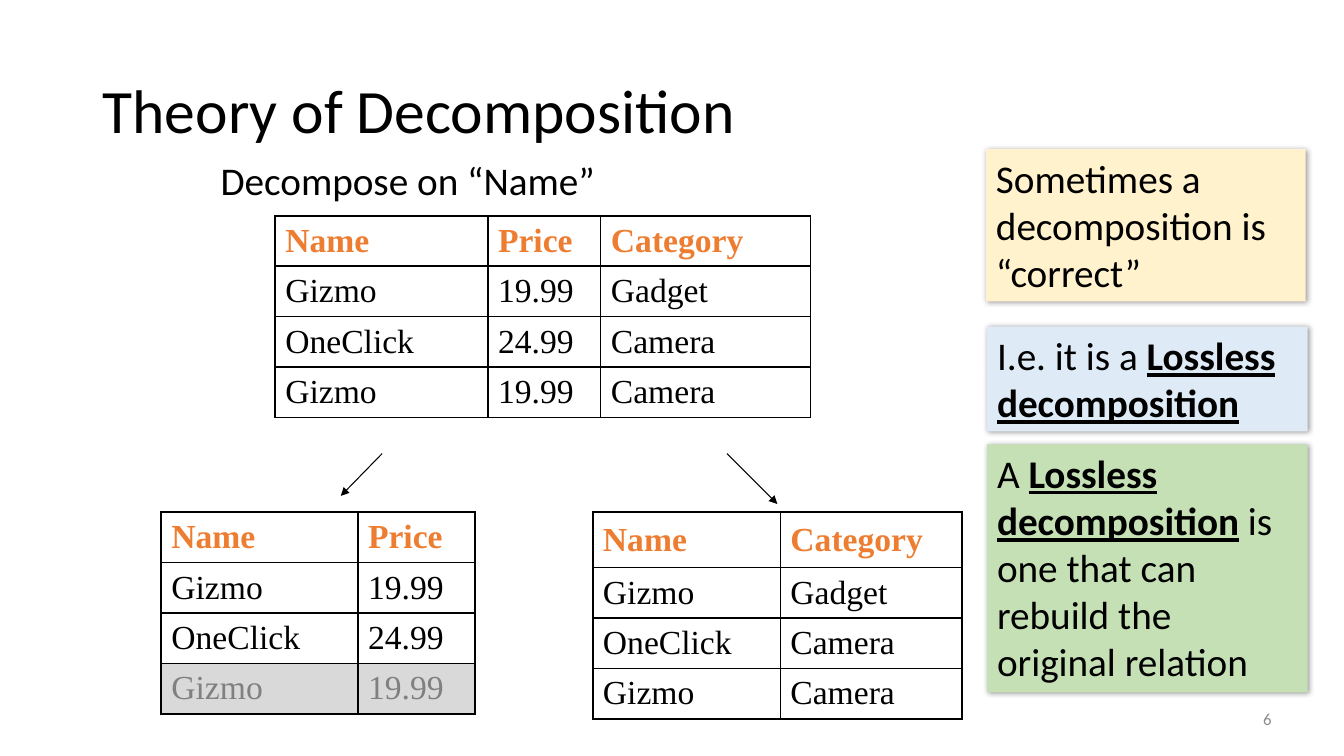
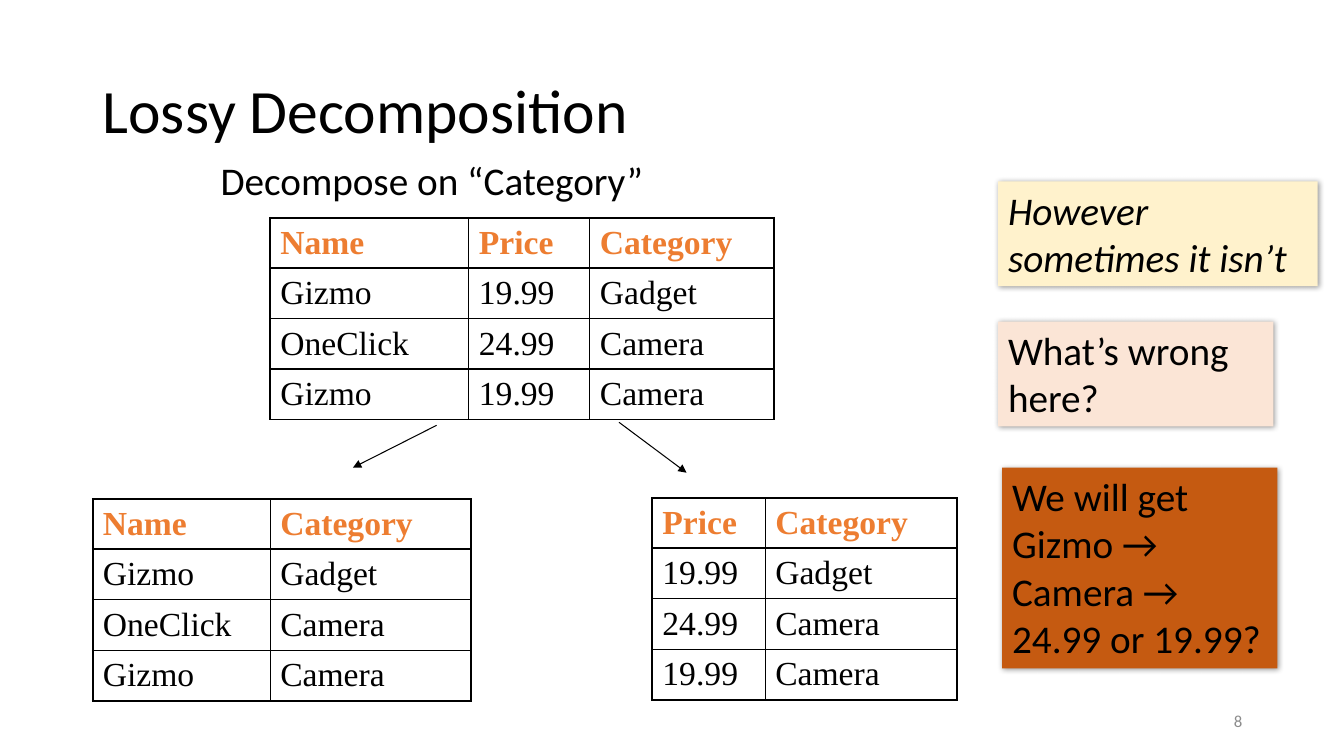
from dataclasses import dataclass

from lxml.etree import SubElement
from pptx import Presentation
from pptx.dml.color import RGBColor
from pptx.enum.shapes import MSO_CONNECTOR, MSO_SHAPE
from pptx.enum.text import MSO_ANCHOR as Anchor, MSO_AUTO_SIZE as AutoSize, PP_ALIGN as Align
from pptx.oxml.ns import qn
from pptx.slide import Slide
from pptx.util import Emu, Inches, Pt


@dataclass(frozen=True)
class Theme:
    font: str = "Calibri"
    table_font: str = "Times New Roman"
    title_size: float = 44
    body_size: float = 28
    table_size: float = 24
    number_size: float = 12
    ink: str = "000000"
    header: str = "ED7D31"
    number: str = "8C8C8C"
    muted_text: str = "808080"
    muted_fill: str = "D9D9D9"
    cream: str = "FFF2CC"
    blue: str = "DEEBF7"
    green: str = "C5E0B4"
    peach: str = "FBE5D6"
    rust: str = "C55A11"
    outer_border: float = 1.5
    inner_border: float = 1
    arrow_width: float = 0.75


THEME = Theme()
ROW_HEIGHT = 0.47


@dataclass(frozen=True)
class Box:
    left: float
    top: float
    width: float
    height: float

    def lengths(self) -> tuple[Emu, ...]:
        return tuple(Inches(value) for value in (self.left, self.top, self.width, self.height))


@dataclass(frozen=True)
class Relation:
    left: float
    top: float
    widths: tuple[float, ...]
    columns: tuple[str, ...]
    header_height: float = ROW_HEIGHT
    muted_row: int | None = None


@dataclass(frozen=True)
class Arrow:
    start: tuple[float, float]
    end: tuple[float, float]


@dataclass(frozen=True)
class Phrase:
    text: str
    strong: bool = False
    italic: bool = False


@dataclass(frozen=True)
class Note:
    box: Box
    fill: str
    phrases: tuple[Phrase, ...]


@dataclass(frozen=True)
class Page:
    title: str
    subtitle: str
    subtitle_width: float
    number: str
    number_box: Box
    relations: tuple[Relation, ...]
    arrows: tuple[Arrow, ...]
    notes: tuple[Note, ...]


PRODUCTS = {
    "Name": ("Gizmo", "OneClick", "Gizmo"),
    "Price": ("19.99", "24.99", "19.99"),
    "Category": ("Gadget", "Camera", "Camera"),
}
LOSSLESS = Phrase("Lossless decomposition", strong=True)

PAGES = (
    Page(
        "Theory of Decomposition", "Decompose on “Name”", 3.96,
        "6", Box(10.38, 6.93, 2.33, 0.4),
        (
            Relation(2.73, 2.14, (2.11, 1.12, 2.08), ("Name", "Price", "Category")),
            Relation(1.6, 5.08, (1.95, 1.16), ("Name", "Price"), muted_row=3),
            Relation(5.88, 5.08, (1.86, 1.8), ("Name", "Category"), header_height=0.55),
        ),
        (Arrow((3.79, 4.5), (3.38, 4.92)), Arrow((7.21, 4.5), (7.71, 5))),
        (
            Note(Box(9.78, 1.48, 3.17, 1.51), THEME.cream,
                 (Phrase("Sometimes a decomposition is “correct”"),)),
            Note(Box(9.79, 3.24, 3.18, 1.04), THEME.blue,
                 (Phrase("I.e. it is a "), LOSSLESS)),
            Note(Box(9.79, 4.41, 3.18, 2.46), THEME.green,
                 (Phrase("A "), LOSSLESS,
                  Phrase(" is one that can rebuild the original relation"))),
        ),
    ),
    Page(
        "Lossy Decomposition", "Decompose on “Category”", 4.44,
        "8", Box(9.42, 6.95, 3, 0.4),
        (
            Relation(2.68, 2.16, (1.97, 1.2, 1.83), ("Name", "Price", "Category")),
            Relation(0.92, 4.95, (1.76, 1.99), ("Name", "Category")),
            Relation(6.47, 4.94, (1.12, 1.9), ("Price", "Category")),
        ),
        (Arrow((4.33, 4.22), (3.5, 4.64)), Arrow((6.14, 4.19), (6.81, 4.69))),
        (
            Note(Box(9.9, 1.8, 3.17, 1.04), THEME.cream,
                 (Phrase("However sometimes it isn’t", italic=True),)),
            Note(Box(9.9, 3.19, 2.73, 1.04), THEME.peach, (Phrase("What’s wrong here?"),)),
            Note(Box(9.94, 4.64, 2.73, 1.99), THEME.rust,
                 (Phrase("We will get Gizmo → Camera → 24.99 or 19.99?"),)),
        ),
    ),
)


def style_font(font, size: float, color: str = THEME.ink, name: str = THEME.font) -> None:
    font.name = name
    font.size = Pt(size)
    font.color.rgb = RGBColor.from_string(color)


def add_label(slide: Slide, box: Box, text: str, size: float, color: str = THEME.ink,
              anchor: Anchor = Anchor.MIDDLE, align: Align = Align.LEFT,
              wrap: bool = True, line_spacing: float = 1.0) -> None:
    text_frame = slide.shapes.add_textbox(*box.lengths()).text_frame
    text_frame.word_wrap = wrap
    text_frame.vertical_anchor = anchor
    text_frame.text = text
    paragraph = text_frame.paragraphs[0]
    paragraph.alignment = align
    paragraph.line_spacing = line_spacing
    style_font(paragraph.runs[0].font, size, color)


def set_borders(cell, widths: dict[str, float]) -> None:
    """Set border widths in points, keyed L, R, T, B in schema order."""
    properties = cell._tc.get_or_add_tcPr()
    for position, (side, width) in enumerate(widths.items()):
        line = SubElement(properties, qn(f"a:ln{side}"), w=str(Pt(width)))
        fill = SubElement(line, qn("a:solidFill"))
        SubElement(fill, qn("a:srgbClr"), val=THEME.ink)
        properties.insert(position, line)


def add_relation(slide: Slide, relation: Relation) -> None:
    rows = [relation.columns, *zip(*(PRODUCTS[name] for name in relation.columns))]
    last_row, last_column = len(rows) - 1, len(relation.columns) - 1
    box = Box(relation.left, relation.top, sum(relation.widths),
              relation.header_height + last_row * ROW_HEIGHT)
    table = slide.shapes.add_table(len(rows), len(relation.columns), *box.lengths()).table
    table.first_row = table.horz_banding = False
    for column, width in zip(table.columns, relation.widths):
        column.width = Inches(width)

    def border(is_outer: bool) -> float:
        return THEME.outer_border if is_outer else THEME.inner_border

    for row_index, values in enumerate(rows):
        is_header = row_index == 0
        is_muted = row_index == relation.muted_row
        table.rows[row_index].height = Inches(relation.header_height if is_header else ROW_HEIGHT)
        color = THEME.header if is_header else THEME.muted_text if is_muted else THEME.ink
        for column_index, value in enumerate(values):
            cell = table.cell(row_index, column_index)
            cell.vertical_anchor = Anchor.MIDDLE
            cell.text_frame.text = value
            font = cell.text_frame.paragraphs[0].runs[0].font
            style_font(font, THEME.table_size, color, THEME.table_font)
            font.bold = is_header
            if is_muted:
                cell.fill.solid()
                cell.fill.fore_color.rgb = RGBColor.from_string(THEME.muted_fill)
            else:
                cell.fill.background()
            set_borders(cell, {
                "L": border(column_index == 0),
                "R": border(column_index == last_column),
                "T": border(row_index <= 1),
                "B": border(row_index in (0, last_row)),
            })


def add_arrow(slide: Slide, arrow: Arrow) -> None:
    points = [Inches(value) for value in (*arrow.start, *arrow.end)]
    connector = slide.shapes.add_connector(MSO_CONNECTOR.STRAIGHT, *points)
    connector.line.color.rgb = RGBColor.from_string(THEME.ink)
    connector.line.width = Pt(THEME.arrow_width)
    properties = connector._element.spPr
    SubElement(properties.find(qn("a:ln")), qn("a:tailEnd"), type="triangle")
    SubElement(properties, qn("a:effectLst"))


def add_soft_shadow(shape) -> None:
    shape.shadow.inherit = False
    effects = shape._element.spPr.find(qn("a:effectLst"))
    shadow = SubElement(effects, qn("a:outerShdw"), blurRad=str(Pt(4)), dist=str(Pt(1)),
                        dir=str(45 * 60000), algn="tl", rotWithShape="0")
    color = SubElement(shadow, qn("a:srgbClr"), val=THEME.ink)
    SubElement(color, qn("a:alpha"), val="40000")


def add_note(slide: Slide, note: Note) -> None:
    shape = slide.shapes.add_shape(MSO_SHAPE.RECTANGLE, *note.box.lengths())
    shape.fill.solid()
    shape.fill.fore_color.rgb = RGBColor.from_string(note.fill)
    shape.line.fill.background()
    add_soft_shadow(shape)
    text_frame = shape.text_frame
    text_frame.word_wrap = True
    text_frame.auto_size = AutoSize.SHAPE_TO_FIT_TEXT
    text_frame.vertical_anchor = Anchor.TOP
    paragraph = text_frame.paragraphs[0]
    paragraph.alignment = Align.LEFT
    for phrase in note.phrases:
        run = paragraph.add_run()
        run.text = phrase.text
        style_font(run.font, THEME.body_size)
        run.font.bold = run.font.underline = phrase.strong
        run.font.italic = phrase.italic


def add_page(presentation, page: Page) -> None:
    slide = presentation.slides.add_slide(presentation.slide_layouts[6])
    add_label(slide, Box(0.92, 0.4, 11.5, 1.45), page.title, THEME.title_size, line_spacing=0.9)
    add_label(slide, Box(2.09, 1.5, page.subtitle_width, 0.57), page.subtitle, THEME.body_size,
              anchor=Anchor.TOP, wrap=False)
    add_label(slide, page.number_box, page.number, THEME.number_size, THEME.number,
              align=Align.RIGHT)
    for relation in page.relations:
        add_relation(slide, relation)
    for arrow in page.arrows:
        add_arrow(slide, arrow)
    for note in page.notes:
        add_note(slide, note)


def main() -> None:
    presentation = Presentation()
    presentation.slide_width = Inches(13.33)
    presentation.slide_height = Inches(7.5)
    for page in PAGES:
        add_page(presentation, page)
    presentation.save("out.pptx")


if __name__ == "__main__":
    main()
